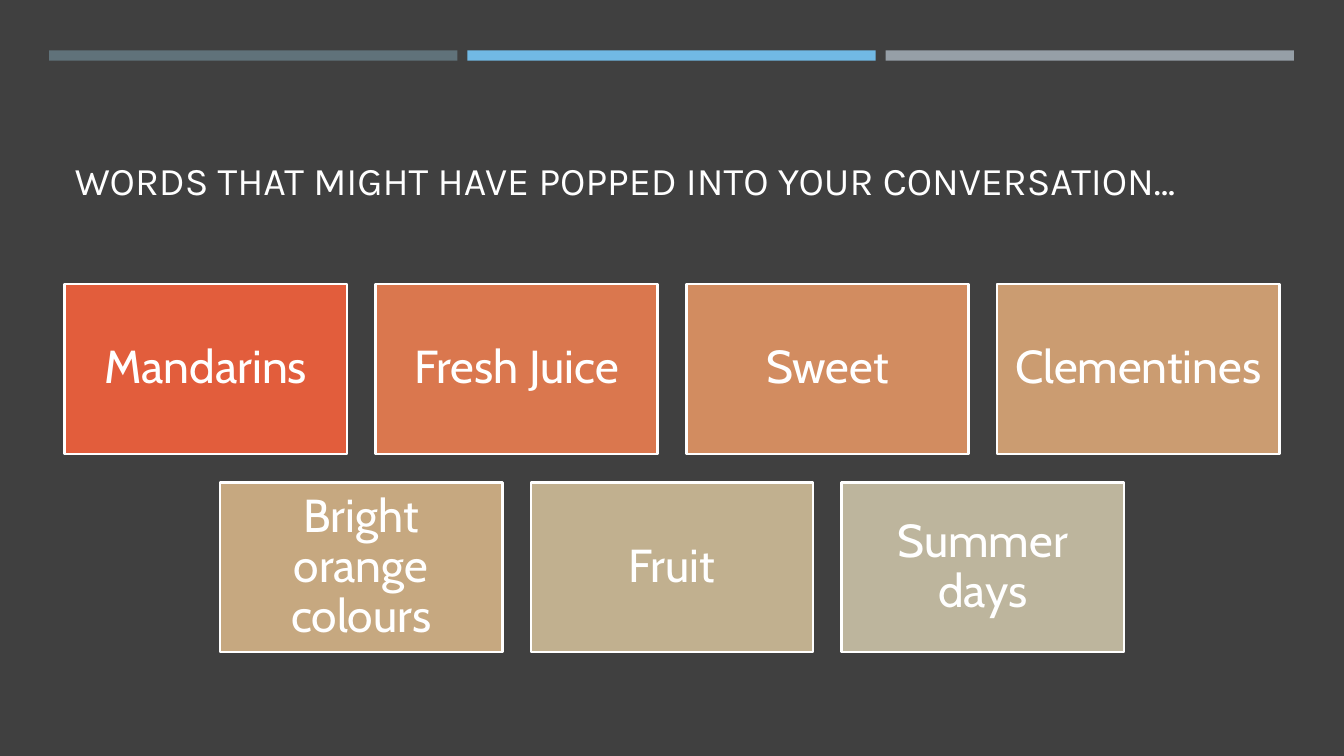
from pptx import Presentation
from pptx.dml.color import RGBColor
from pptx.enum import shapes, text
from pptx.util import Cm, Pt

COLOURS = {
    "background": "404040",
    "white": "FFFFFF",
    "slate": "60727A",
    "sky": "71B9E4",
    "silver": "969FA7",
}
WORD_ROWS = [
    [("Mandarins", "E25D3C"), ("Fresh Juice", "DA774E"),
     ("Sweet", "D28C60"), ("Clementines", "CB9C71")],
    [("Bright orange colours", "C6A880"), ("Fruit", "C1B08F"),
     ("Summer days", "BDB59D")],
]
PAGE_WIDTH, PAGE_HEIGHT = Cm(33.87), Cm(19.05)


def colour(value):
    return RGBColor.from_string(value)


def format_text(frame, font_name, size, alignment, anchor):
    frame.word_wrap = True
    frame.auto_size = text.MSO_AUTO_SIZE.NONE
    frame.vertical_anchor = anchor
    para = frame.paragraphs[0]
    para.alignment = alignment
    para.line_spacing = 0.9
    for span in para.runs:
        span.font.name = font_name
        span.font.size = Pt(size)
        span.font.color.rgb = colour(COLOURS["white"])


def add_rectangle(page, left, top, width, height, fill):
    box = page.shapes.add_shape(shapes.MSO_SHAPE.RECTANGLE, left, top, width, height)
    box.shadow.inherit = False
    box.fill.solid()
    box.fill.fore_color.rgb = colour(fill)
    box.line.fill.background()
    return box


def place_title(page, left, top, width, height):
    title = page.shapes.title
    title.left, title.top, title.width, title.height = left, top, width, height
    title.text_frame.text = "WORDS THAT MIGHT HAVE POPPED INTO YOUR CONVERSATION…"
    format_text(title.text_frame, "Karla", 28, text.PP_ALIGN.LEFT,
                text.MSO_ANCHOR.BOTTOM)


def add_top_bars(page, left, top, width, height):
    names = ("slate", "sky", "silver")
    gap = Cm(0.25)
    bar_width = (width - gap * (len(names) - 1)) // len(names)
    for index, name in enumerate(names):
        add_rectangle(page, left + index * (bar_width + gap), top,
                      bar_width, height, COLOURS[name])


def add_word_card(page, left, top, width, height, word, fill):
    card = add_rectangle(page, left, top, width, height, fill)
    card.line.color.rgb = colour(COLOURS["white"])
    card.line.width = Pt(1.75)
    frame = card.text_frame
    frame.margin_left = frame.margin_right = Cm(0.35)
    frame.margin_top = frame.margin_bottom = Cm(0.35)
    frame.text = word
    format_text(frame, "Cabin", 33, text.PP_ALIGN.CENTER, text.MSO_ANCHOR.MIDDLE)


def add_word_grid(page, left, top, width, height):
    """Fill the box with rows of equal cards, each row centred."""
    gap = Cm(0.72)
    columns = max(len(row) for row in WORD_ROWS)
    card_width = (width - gap * (columns - 1)) // columns
    card_height = (height - gap * (len(WORD_ROWS) - 1)) // len(WORD_ROWS)
    for row_index, row in enumerate(WORD_ROWS):
        row_width = len(row) * (card_width + gap) - gap
        row_left = left + (width - row_width) // 2
        row_top = top + row_index * (card_height + gap)
        for index, (word, fill) in enumerate(row):
            add_word_card(page, row_left + index * (card_width + gap), row_top,
                          card_width, card_height, word, fill)


def main():
    deck = Presentation()
    deck.slide_width, deck.slide_height = PAGE_WIDTH, PAGE_HEIGHT
    page = deck.slides.add_slide(deck.slide_layouts.get_by_name("Title Only"))
    page.background.fill.solid()
    page.background.fill.fore_color.rgb = colour(COLOURS["background"])
    place_title(page, Cm(1.63), Cm(1.96), Cm(30.63), Cm(3.3))
    add_top_bars(page, Cm(1.24), Cm(1.27), Cm(31.37), Cm(0.26))
    add_word_grid(page, Cm(1.63), Cm(7.16), Cm(30.61), Cm(9.27))
    deck.save("out.pptx")


if __name__ == "__main__":
    main()
